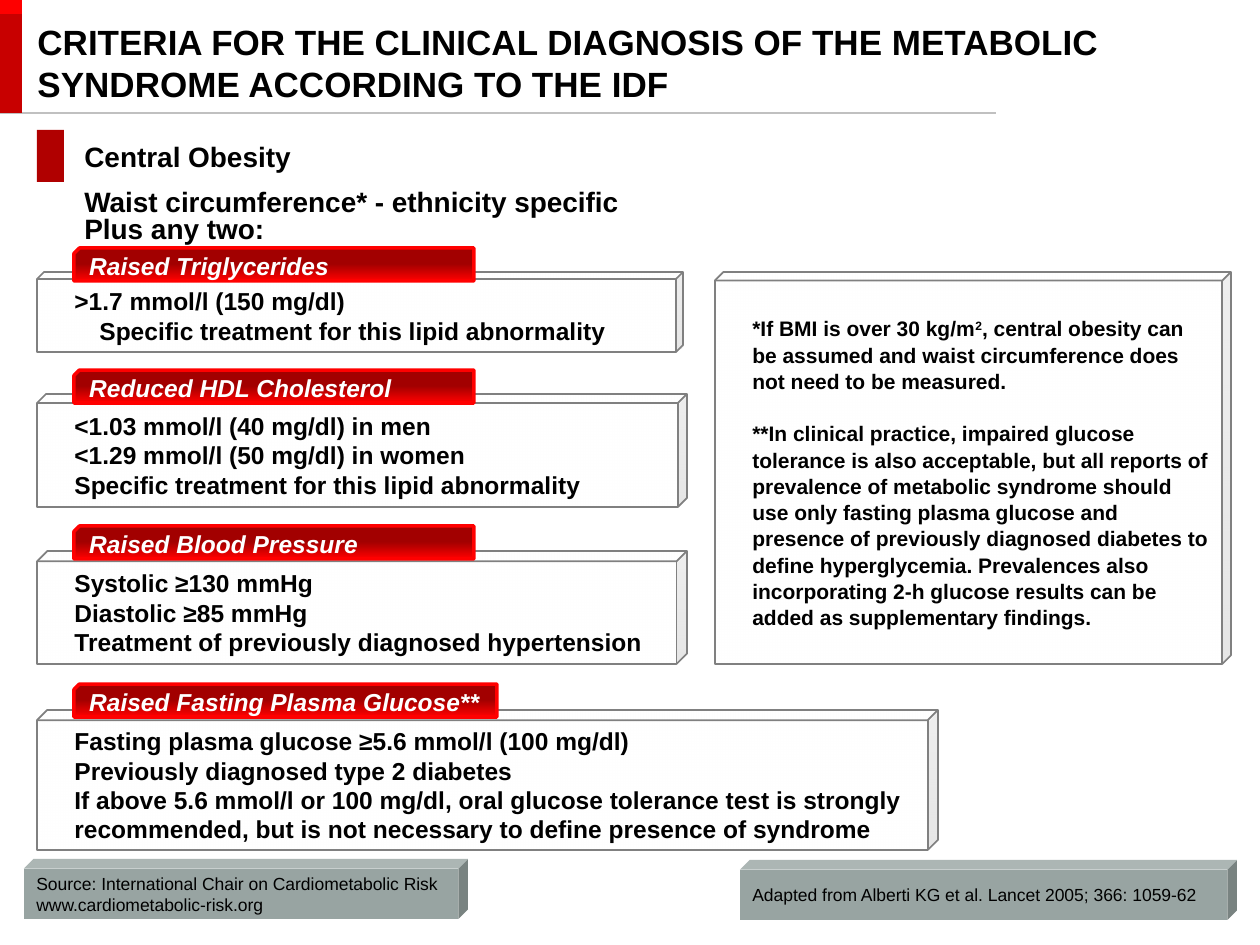
from lxml import etree
from pptx import Presentation
from pptx.dml.color import RGBColor
from pptx.enum.shapes import MSO_CONNECTOR, MSO_SHAPE
from pptx.enum.text import MSO_ANCHOR, PP_ALIGN
from pptx.oxml.ns import qn
from pptx.util import Pt

RECT, CUBE, SNIP = MSO_SHAPE.RECTANGLE, MSO_SHAPE.CUBE, MSO_SHAPE.SNIP_1_RECTANGLE
MIDDLE, TOP = MSO_ANCHOR.MIDDLE, MSO_ANCHOR.TOP
FONT = "Arial"
INDENT = 25

TITLE = "CRITERIA FOR THE CLINICAL DIAGNOSIS OF THE METABOLIC SYNDROME ACCORDING TO THE IDF"
INTRO = ["Waist circumference* - ethnicity specific", "Plus any two:"]
# heading, tag (top, width), box (top, width, height, depth ratio), lines
CRITERIA = [
    ("Raised Triglycerides", (248, 400), (272, 646, 80, 0.088),
     [">1.7 mmol/l (150 mg/dl)", "Specific treatment for this lipid abnormality"]),
    ("Reduced HDL Cholesterol", (370, 400), (394, 650, 113, 0.08),
     ["<1.03 mmol/l (40 mg/dl) in men", "<1.29 mmol/l (50 mg/dl) in women",
      "Specific treatment for this lipid abnormality"]),
    ("Raised Blood Pressure", (526, 400), (551, 650, 113, 0.092),
     ["Systolic ≥130 mmHg", "Diastolic ≥85 mmHg",
      "Treatment of previously diagnosed hypertension"]),
    ("Raised Fasting Plasma Glucose**", (684, 423), (710, 901, 140, 0.073),
     ["Fasting plasma glucose ≥5.6 mmol/l (100 mg/dl)",
      "Previously diagnosed type 2 diabetes",
      "If above 5.6 mmol/l or 100 mg/dl, oral glucose tolerance test is strongly "
      "recommended, but is not necessary to define presence of syndrome"]),
]
NOTES = [
    ["*If BMI is over 30 kg/m", "2",
     ", central obesity can be assumed and waist circumference does not need to be measured."],
    "**In clinical practice, impaired glucose tolerance is also acceptable, but all reports of "
    "prevalence of metabolic syndrome should use only fasting plasma glucose and presence of "
    "previously diagnosed diabetes to define hyperglycemia. Prevalences also incorporating 2-h "
    "glucose results can be added as supplementary findings.",
]
FOOTERS = [
    ((24, 859, 444, 60),
     ["Source: International Chair on Cardiometabolic Risk", "www.cardiometabolic-risk.org"]),
    ((740, 860, 497, 60), ["Adapted from Alberti KG et al. Lancet 2005; 366: 1059-62"]),
]
BARS = [((0, 0, 22, 113), "C80000"), ((0, 0, 22, 14), "FE0000"), ((37, 130, 27, 52), "B00000")]


def px(n):
    return round(n * 914400 / 126)


def rgb(value):
    return RGBColor.from_string(value)


def add_box(kind, at, fill=None, line=None, weight=1.0, adj=None):
    """Add a shape; fill is a hex string or a list of (position, colour, alpha) stops."""
    s = slide.shapes.add_shape(kind, *map(px, at))
    s.shadow.inherit = False
    if adj is not None:
        s.adjustments[0] = adj
    if isinstance(fill, str):
        s.fill.solid()
        s.fill.fore_color.rgb = rgb(fill)
    else:
        s.fill.gradient()
        s.fill.gradient_angle = 90
        for stop, (position, color, alpha) in zip(s.fill.gradient_stops, fill):
            stop.position = position
            stop.color.rgb = rgb(color)
        colors = s._element.spPr.iter(qn("a:srgbClr"))
        for node, (position, color, alpha) in zip(list(colors), fill):
            if alpha < 100:
                etree.SubElement(node, qn("a:alpha"), val=str(alpha * 1000))
    if line:
        s.line.color.rgb = rgb(line)
        s.line.width = Pt(weight)
    else:
        s.line.fill.background()
    return s


def add_text(at, paragraphs, **style):
    s = slide.shapes.add_textbox(*map(px, at))
    write(s, paragraphs, **style)


def write(s, paragraphs, size=14, color="000000", bold=True, italic=False,
          anchor=MIDDLE, left=0, first=0, spacing=None, gap=0, wrap=True):
    """Fill a shape; a paragraph given as a list has its odd parts raised.

    first is the extra first-line indent of every paragraph after the first.
    """
    tf = s.text_frame
    tf.word_wrap = wrap
    tf.vertical_anchor = anchor
    for i, parts in enumerate(paragraphs):
        p = tf.paragraphs[0] if i == 0 else tf.add_paragraph()
        p.alignment = PP_ALIGN.LEFT
        pPr = p._p.get_or_add_pPr()
        pPr.set("marL", str(px(left)))
        pPr.set("indent", str(px(first if i else 0)))
        if spacing:
            p.line_spacing = Pt(spacing)
        if i and gap:
            p.space_before = Pt(gap)
        for j, text in enumerate([parts] if isinstance(parts, str) else parts):
            r = p.add_run()
            r.text = text
            f = r.font
            f.name, f.size, f.bold, f.italic = FONT, Pt(size), bold, italic
            f.color.rgb = rgb(color)
            if j % 2:
                r._r.get_or_add_rPr().set("baseline", "30000")


prs = Presentation()
prs.slide_width, prs.slide_height = px(1260), px(945)
slide = prs.slides.add_slide(prs.slide_layouts[6])

GLASS = [(0, "FFFFFF", 49), (1, "FFFFFF", 32)]
RED = [(0, "FF0000", 100), (0.52, "A20000", 100)]

rule = slide.shapes.add_connector(MSO_CONNECTOR.STRAIGHT, 0, px(113), px(996), px(113))
rule.line.color.rgb = rgb("C0C0C0")
rule.line.width = Pt(0.75)
etree.SubElement(rule._element.spPr, qn("a:effectLst"))

for at, color in BARS:
    add_box(RECT, at, color)

add_text((25, 14, 1142, 97), [TITLE], size=20)
add_text((72, 130, 334, 53), ["Central Obesity"], size=16)
add_text((72, 186, 576, 66), INTRO, size=16, anchor=TOP, spacing=15)

notes = add_box(CUBE, (715, 272, 516, 392), GLASS, "808080", adj=0.022)
write(notes, NOTES, size=12, left=INDENT, spacing=15, gap=15)

for heading, (tag_top, tag_width), (top, width, height, depth), lines in CRITERIA:
    body = add_box(CUBE, (37, top, width, height), GLASS, "808080", adj=depth)
    write(body, lines, left=INDENT, first=INDENT if len(lines) == 2 else 0)
    tag = add_box(SNIP, (74, tag_top, tag_width, 33), RED, "FF0000", weight=2)
    tag._element.spPr.get_or_add_xfrm().set("flipH", "1")
    write(tag, [heading], color="FFFFFF", italic=True)

for at, lines in FOOTERS:
    write(add_box(CUBE, at, "98A4A2", adj=0.16), lines, size=10, bold=False, wrap=False)

prs.save("out.pptx")
